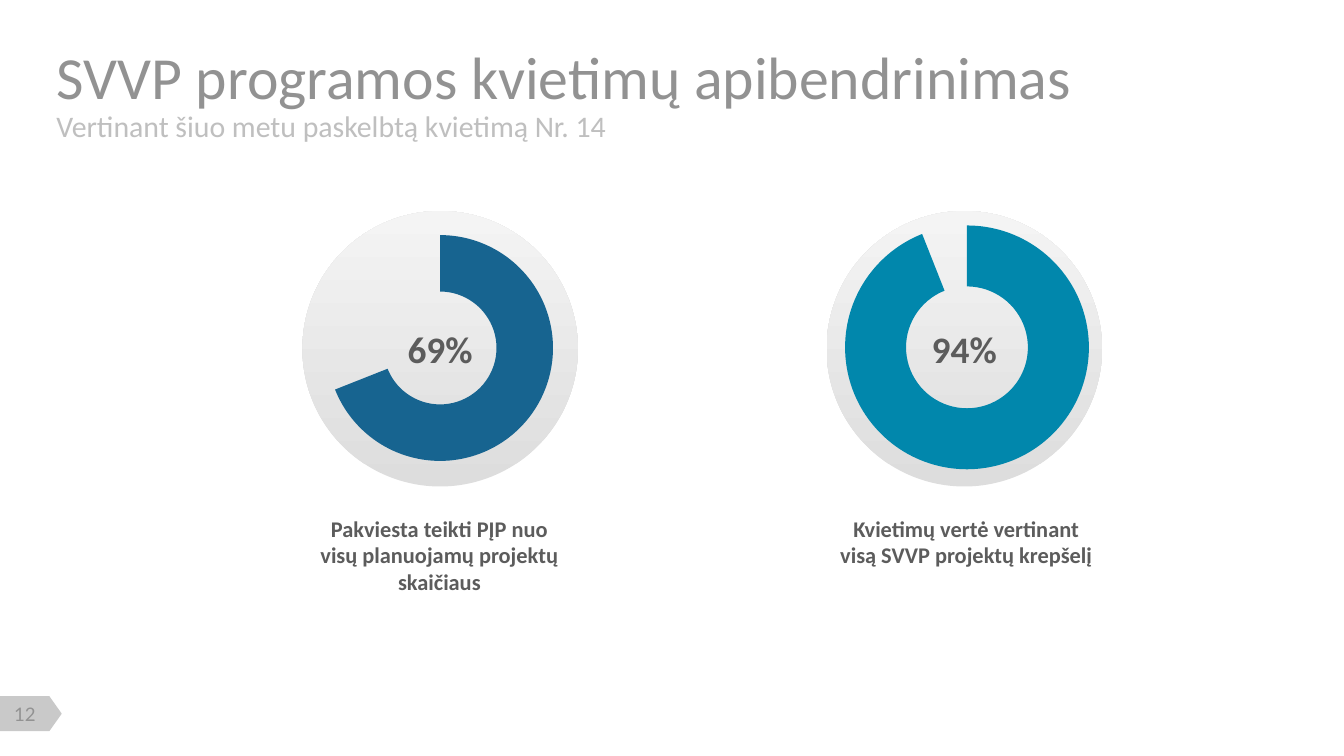
from lxml import etree
from pptx import Presentation
from pptx.chart.data import CategoryChartData
from pptx.dml.color import RGBColor
from pptx.enum.chart import XL_CHART_TYPE as ChartType
from pptx.enum.shapes import MSO_SHAPE as Shape
from pptx.enum.text import MSO_ANCHOR as Anchor, MSO_AUTO_SIZE as AutoSize, PP_ALIGN as Align
from pptx.oxml.ns import qn
from pptx.util import Inches, Pt

COLORS = {
    "title": "929292", "subtitle": "BFBFBF", "text": "5C5C5C", "chart": "262626",
    "tag": "C9C9C9", "dial_bottom": "DDDDDD", "dial_top": "F4F4F4",
    "blue": "176490", "teal": "0187AC",
}
TITLE = "SVVP programos kvietimų apibendrinimas"
SUBTITLE = "Vertinant šiuo metu paskelbtą kvietimą Nr. 14"
PAGE_NUMBER = "12"
DIALS = [
    {"left": 2.25, "percent": 69, "color": "blue", "chart_size": (2.05, 2.19),
     "plot": {"x": 0.09, "y": 0.14, "w": 0.82, "h": 0.77},
     "caption": "Pakviesta teikti PĮP nuo visų planuojamų projektų skaičiaus",
     "caption_box": (2.32, 3.83, 1.9, 0.61)},
    {"left": 6.15, "percent": 94, "color": "teal", "chart_size": (2.09, 2.29),
     "plot": None,
     "caption": "Kvietimų vertė vertinant visą SVVP projektų krepšelį",
     "caption_box": (6.24, 3.83, 1.9, 0.4)},
]
SLIDE_WIDTH = Inches(10)
SLIDE_HEIGHT = SLIDE_WIDTH * 9 // 16
DIAL_TOP, DIAL_SIZE, CHART_TOP, HOLE_SIZE = 1.57, 2.05, 1.44, 64


def rgb(name):
    """Return the named colour."""
    return RGBColor.from_string(COLORS[name])


def inches(*values):
    """Convert numbers to lengths."""
    return [Inches(value) for value in values]


def write(shape, text, size, color, bold=False, align=Align.CENTER, font="Calibri",
          insets=(0, 0, 0, 0), anchor=Anchor.MIDDLE, wrap=True, fit=AutoSize.NONE):
    """Put one formatted paragraph into a shape."""
    frame = shape.text_frame
    frame.text = text
    left, top, right, bottom = inches(*insets)
    frame_format = {"margin_left": left, "margin_top": top, "margin_right": right,
                    "margin_bottom": bottom, "vertical_anchor": anchor,
                    "word_wrap": wrap, "auto_size": fit}
    for name, value in frame_format.items():
        setattr(frame, name, value)
    paragraph = frame.paragraphs[0]
    paragraph.alignment = align
    run_font = paragraph.runs[0].font
    for name, value in {"name": font, "size": Pt(size), "bold": bold}.items():
        setattr(run_font, name, value)
    run_font.color.rgb = rgb(color)


def add_dial(slide, dial):
    """Add the gradient disc with its percentage."""
    disc = slide.shapes.add_shape(
        Shape.OVAL, *inches(dial["left"], DIAL_TOP, DIAL_SIZE, DIAL_SIZE))
    disc.shadow.inherit = False
    disc.line.fill.background()
    disc.fill.gradient()
    disc.fill.gradient_angle = 90
    for stop, (position, color) in zip(
            disc.fill.gradient_stops, [(0, "dial_bottom"), (1, "dial_top")]):
        stop.position = position
        stop.color.rgb = rgb(color)
    write(disc, f"{dial['percent']}%", 20, "text", bold=True)


def set_plot_layout(chart, plot):
    """Place the inner plot area by fractions of the chart."""
    area = chart._chartSpace.find(".//" + qn("c:plotArea"))
    layout = area.find(qn("c:layout"))
    if layout is None:
        layout = etree.Element(qn("c:layout"))
        area.insert(0, layout)
    manual = etree.SubElement(layout, qn("c:manualLayout"))
    values = {"layoutTarget": "inner", "xMode": "edge", "yMode": "edge", **plot}
    for name, value in values.items():
        etree.SubElement(manual, qn(f"c:{name}")).set("val", str(value))


def add_ring(slide, dial):
    """Add the doughnut chart of a dial."""
    data = CategoryChartData()
    data.categories = ["1", "2"]
    data.add_series("Series 1", [dial["percent"], 100 - dial["percent"]])
    chart = slide.shapes.add_chart(
        ChartType.DOUGHNUT, *inches(dial["left"], CHART_TOP, *dial["chart_size"]), data).chart
    chart.has_legend = False
    chart.has_title = False
    chart.font.name = "Calibri"
    chart.font.size = Pt(18)
    chart.font.color.rgb = rgb("chart")
    plot = chart.plots[0]
    plot.vary_by_categories = True
    plot.has_data_labels = False
    chart._chartSpace.find(".//" + qn("c:holeSize")).set("val", str(HOLE_SIZE))
    value_point, rest_point = [plot.series[0].points[index].format for index in range(2)]
    value_point.fill.solid()
    value_point.fill.fore_color.rgb = rgb(dial["color"])
    rest_point.fill.background()
    for point in (value_point, rest_point):
        point.line.fill.background()
    if dial["plot"]:
        set_plot_layout(chart, dial["plot"])


def add_page_tag(slide):
    """Add the page number on its arrow tag."""
    tag = slide.shapes.add_shape(
        Shape.FLOWCHART_OFFPAGE_CONNECTOR, *inches(0.1, 5.08, 0.26, 0.46))
    tag.rotation = 270
    tag.shadow.inherit = False
    tag.fill.solid()
    tag.fill.fore_color.rgb = rgb("tag")
    tag.line.fill.background()
    number = slide.shapes.add_textbox(*inches(0.02, 5.23, 0.33, 0.17))
    write(number, PAGE_NUMBER, 10, "title", font="Lato", fit=AutoSize.SHAPE_TO_FIT_TEXT)


def main():
    """Build and save the slide."""
    presentation = Presentation()
    presentation.slide_width = SLIDE_WIDTH
    presentation.slide_height = SLIDE_HEIGHT
    slide = presentation.slides.add_slide(presentation.slide_layouts[5])
    add_page_tag(slide)
    for dial in DIALS:
        add_dial(slide, dial)
        add_ring(slide, dial)
        caption = slide.shapes.add_textbox(*inches(*dial["caption_box"]))
        write(caption, dial["caption"], 12, "text", bold=True, anchor=Anchor.TOP,
              fit=AutoSize.SHAPE_TO_FIT_TEXT)
    title = slide.shapes.title
    title.left, title.top, title.width, title.height = inches(0.42, 0.37, 9.15, 0.39)
    write(title, TITLE, 32, "title", align=Align.LEFT, insets=(0, 0.05, 0.1, 0.05))
    subtitle = slide.shapes.add_textbox(*inches(0.42, 0.84, 9.13, 0.19))
    write(subtitle, SUBTITLE, 16, "subtitle", align=Align.LEFT)
    presentation.save("out.pptx")


if __name__ == "__main__":
    main()
